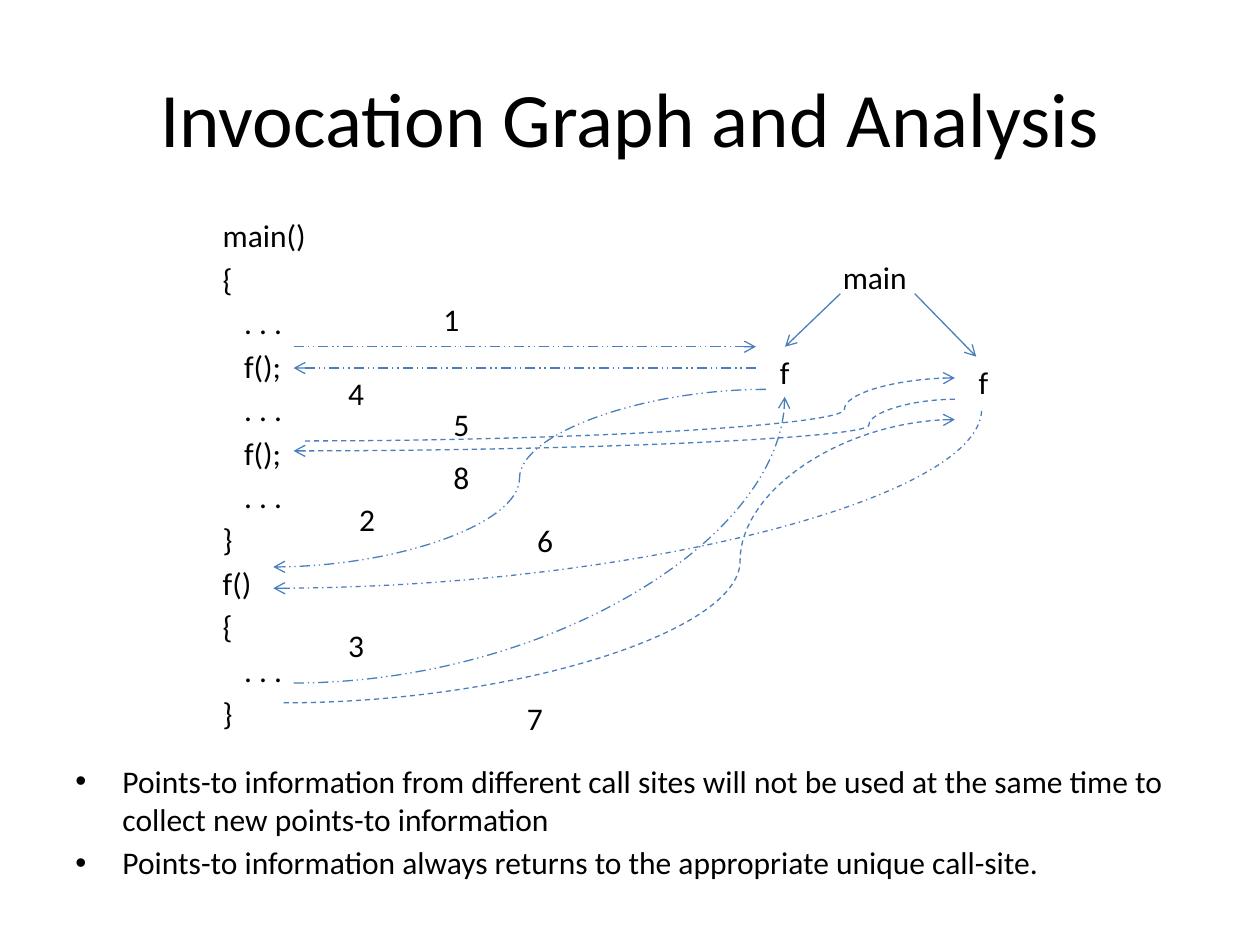
import pptx
import pptx.dml.color
import pptx.enum.dml
import pptx.enum.shapes
import pptx.enum.text
import pptx.oxml
import pptx.oxml.ns
import pptx.util

Cm, Pt = pptx.util.Cm, pptx.util.Pt
qn = pptx.oxml.ns.qn
Kind = pptx.enum.shapes.MSO_CONNECTOR
Dash = pptx.enum.dml.MSO_LINE
Align = pptx.enum.text.PP_ALIGN
Anchor = pptx.enum.text.MSO_ANCHOR

INK, BLUE = "000000", "4B7EBC"
GAP = Pt(3.2)
CODE = ["main()", "{", "\t. . .", "\tf();", "\t. . .", "\tf();", "\t. . .", "}",
        "f()", "{", "\t. . .", "}"]
POINTS = ["Points-to information from different call sites will not be used at "
          "the same time to collect new points-to information",
          "Points-to information always returns to the appropriate unique call-site."]
# Step number: left and top in cm
STEPS = {"1": (8.69, 5.93), "2": (6.99, 9.95), "3": (6.77, 12.49),
         "4": (6.77, 7.41), "5": (8.89, 8.04), "6": (10.58, 10.37),
         "7": (10.37, 13.97), "8": (8.89, 9.1)}
LONG = Dash.DASH_DOT_DOT
# Ends in cm, dash, place of the bend (None for a quarter turn), arrow end
FLOWS = [
    ((5.92, 6.99, 15.24, 6.99), LONG, 0.5, "tailEnd"),
    ((15.24, 7.42, 5.92, 7.42), LONG, 0.5, "tailEnd"),
    ((15.44, 7.85, 5.51, 11.43), LONG, 0.5, "tailEnd"),
    ((5.92, 13.77, 15.82, 8), LONG, None, "tailEnd"),
    ((6.15, 8.89, 19.25, 7.62), Dash.DASH, 0.83, "tailEnd"),
    ((5.51, 11.86, 19.79, 8.25), Dash.DASH_DOT, None, "headEnd"),
    ((5.72, 14.17, 19.25, 8.46), Dash.DASH, 0.68, "tailEnd"),
    ((19.25, 8.05, 5.92, 9.09), Dash.DASH, 0.13, "tailEnd"),
]


def color(code):
    return pptx.dml.color.RGBColor.from_string(code)


def apply(item, style):
    for name, value in style.items():
        setattr(item, name, value)


def indent(para, left, first=0):
    props = para._p.get_or_add_pPr()
    props.set("marL", str(Cm(left)))
    props.set("indent", str(Cm(first)))
    return props


def add_text(slide, box, lines, size=18, frame=None, para=None):
    """Add a text box; frame and para hold format values."""
    shape = slide.shapes.add_textbox(*map(Cm, box))
    body = shape.text_frame
    apply(body, {"word_wrap": True, **(frame or {})})
    for i, line in enumerate(lines):
        item = body.paragraphs[0] if i == 0 else body.add_paragraph()
        apply(item, para or {})
        run = item.add_run()
        run.text = line.lstrip("\t")
        apply(run.font, {"name": "Calibri", "size": Pt(size)})
        run.font.color.rgb = color(INK)
        if line.startswith("\t"):
            indent(item, 0.43)
    return shape


def add_points(slide, box, lines):
    shape = add_text(slide, box, lines, para={"space_before": GAP})
    for item in shape.text_frame.paragraphs:
        props = indent(item, 0.95, -0.95)
        font = props.makeelement(qn("a:buFont"), {"typeface": "Arial"})
        mark = props.makeelement(qn("a:buChar"), {"char": "•"})
        props.extend([font, mark])


def add_arrow(slide, kind, ends, end="tailEnd", dash=None):
    line = slide.shapes.add_connector(kind, *map(Cm, ends))
    apply(line.line, {"width": Pt(0.75), "dash_style": dash})
    line.line.color.rgb = color(BLUE)
    props = line._element.spPr
    stroke = props.find(qn("a:ln"))
    stroke.append(stroke.makeelement(qn("a:" + end), {"type": "arrow"}))
    props.append(props.makeelement(qn("a:effectLst"), {}))
    return line


def add_flow(slide, ends, dash, bend, end):
    line = add_arrow(slide, Kind.CURVE, ends, end, dash)
    geom = line._element.spPr.find(qn("a:prstGeom"))
    if bend is None:
        geom.set("prst", "curvedConnector2")
    else:
        guides = geom.find(qn("a:avLst"))
        value = {"name": "adj1", "fmla": f"val {round(bend * 100000)}"}
        guides.append(guides.makeelement(qn("a:gd"), value))


def add_graph(slide):
    """Add the call tree: main with its two calls of f."""
    frame = {"word_wrap": False}
    add_text(slide, (16.74, 5.08, 1.83, 1.02), ["main"], frame=frame)
    left = add_text(slide, (15.47, 6.99, 0.71, 1.02), ["f"], frame=frame)
    add_text(slide, (19.48, 7.19, 0.64, 1.06), ["f"], frame=frame)
    edge = add_arrow(slide, Kind.STRAIGHT, (16.94, 5.92, 15.82, 6.99))
    edge.end_connect(left, 0)
    add_arrow(slide, Kind.STRAIGHT, (18.44, 5.92, 19.68, 7.19))


def main():
    deck = pptx.Presentation()
    apply(deck, {"slide_width": Cm(25.4), "slide_height": Cm(19.05)})
    slide = deck.slides.add_slide(deck.slide_layouts[6])
    add_text(slide, (1.27, 0.76, 22.86, 3.18), ["Invocation Graph and Analysis"], 44,
             {"vertical_anchor": Anchor.MIDDLE}, {"alignment": Align.CENTER})
    add_text(slide, (4.24, 4.24, 3.6, 10.16), CODE, para={"space_before": GAP})
    add_graph(slide)
    for flow in FLOWS:
        add_flow(slide, *flow)
    for step, spot in STEPS.items():
        add_text(slide, (*spot, 1.07, 1.02), [step])
    add_points(slide, (1.27, 15.24, 24.13, 3.18), POINTS)
    deck.save("out.pptx")


if __name__ == "__main__":
    main()
